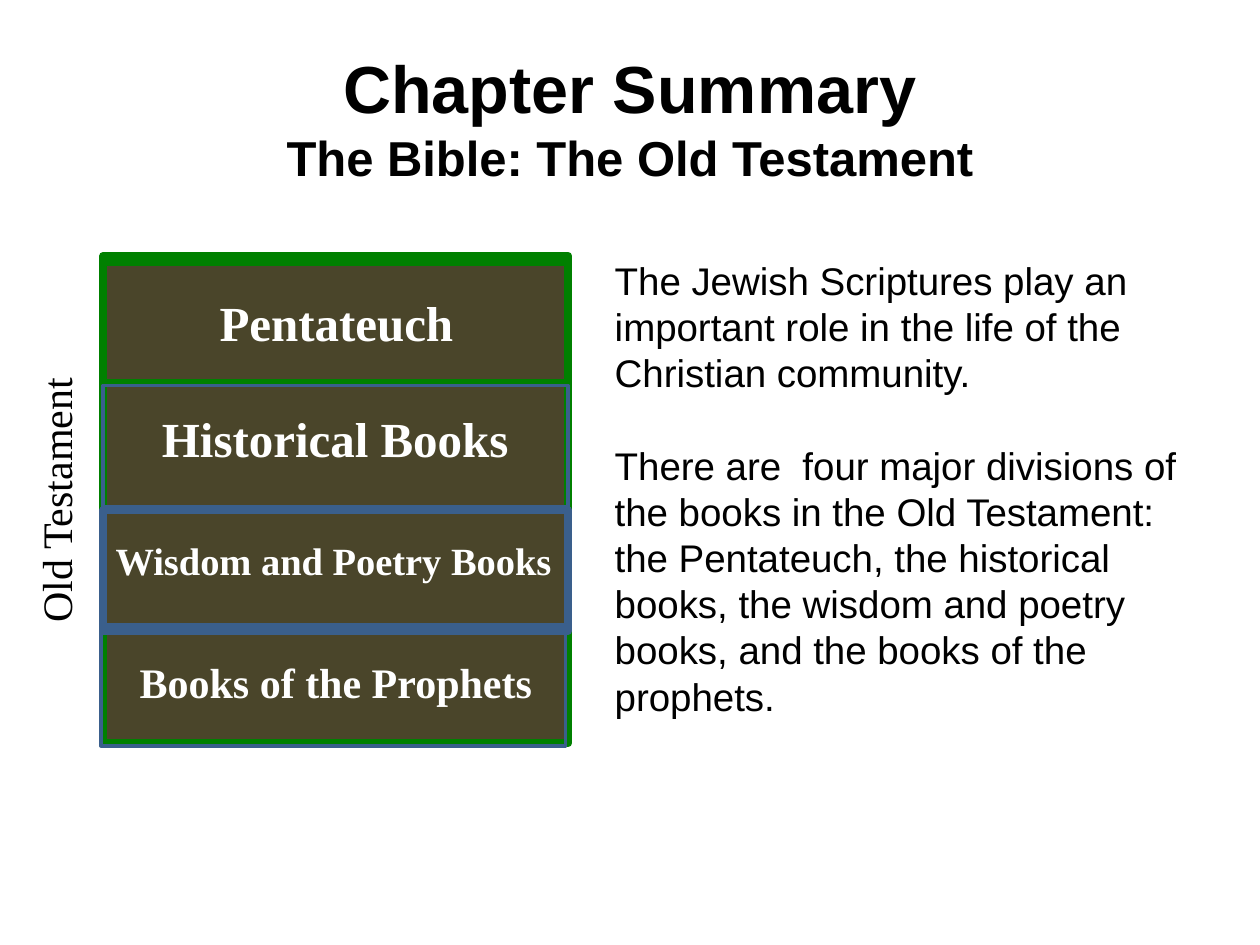
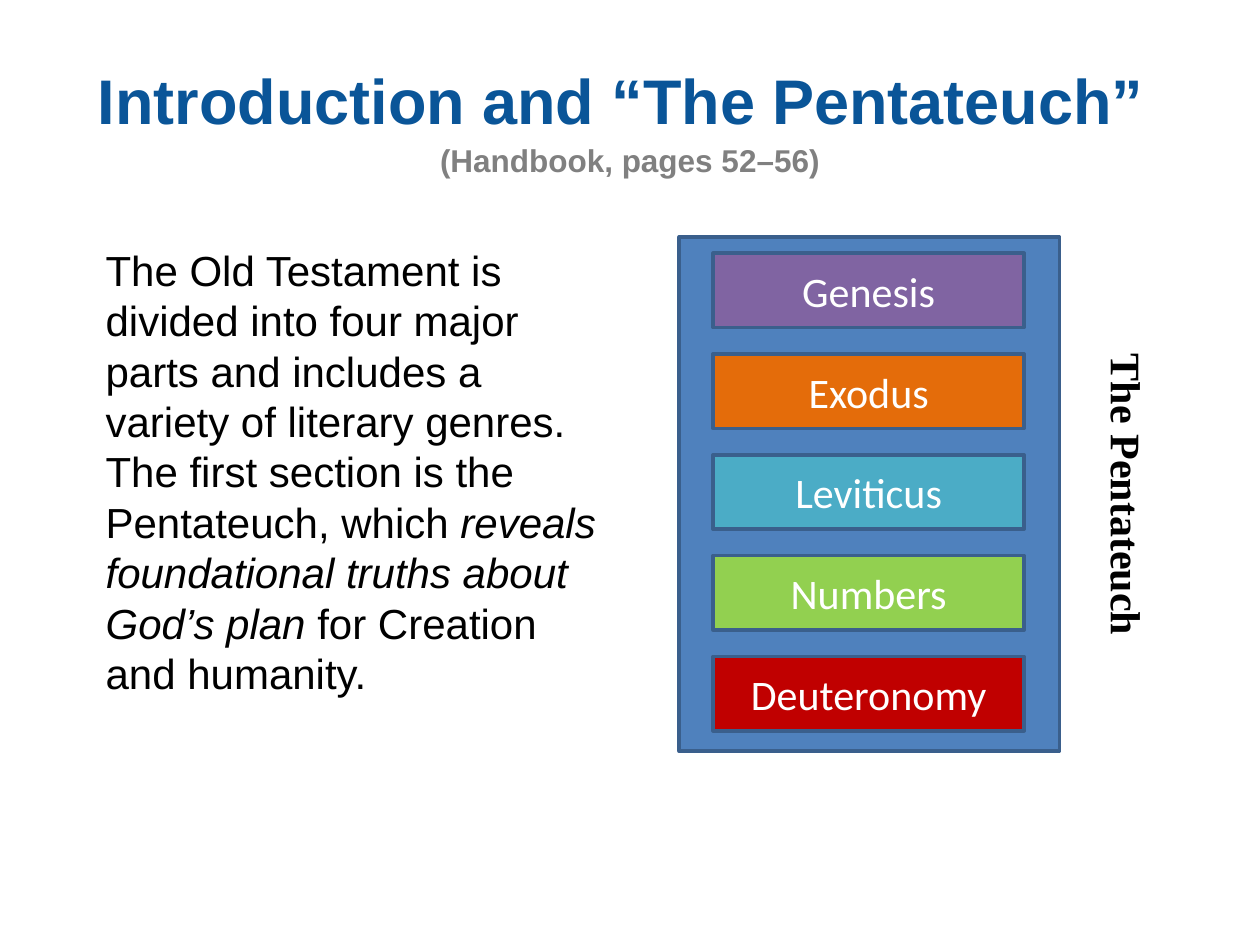
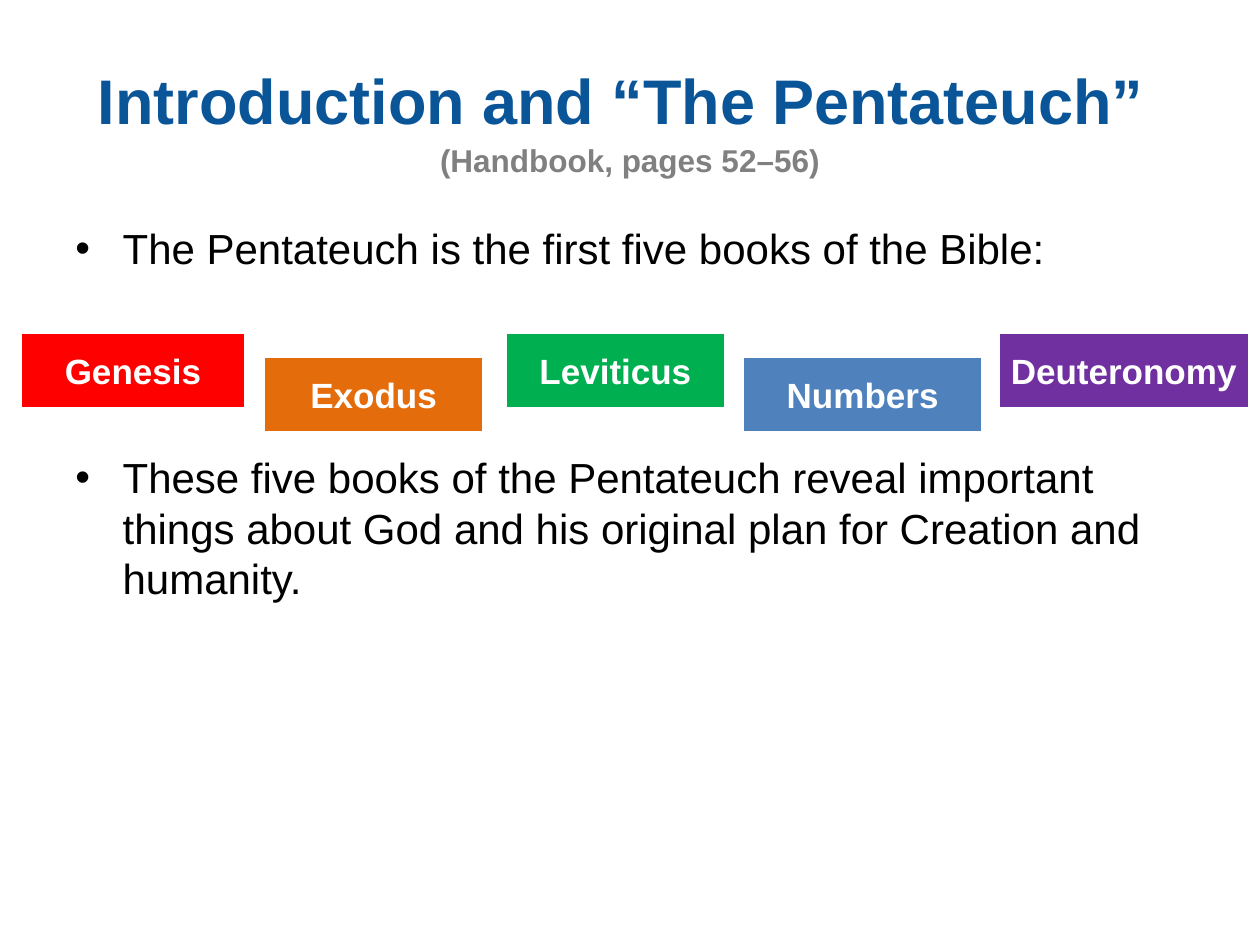
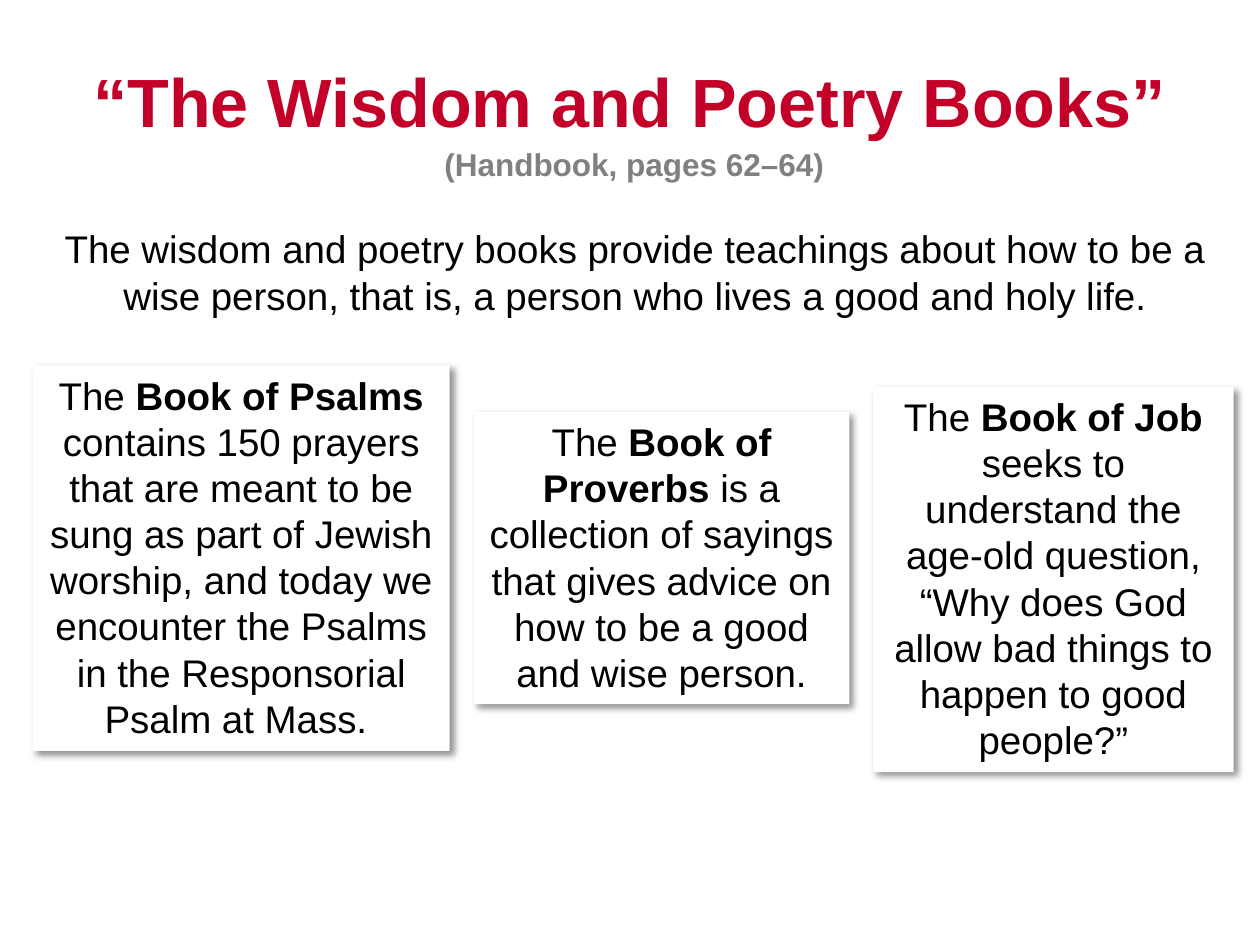
from dataclasses import dataclass

from lxml import etree
from pptx import Presentation
from pptx import util as u
from pptx.dml.color import RGBColor
from pptx.enum import shapes, text
from pptx.oxml import ns

Pt = u.Pt
LEFT, MID = text.PP_ALIGN.LEFT, text.PP_ALIGN.CENTER


@dataclass(frozen=True)
class Theme:
    """Colours, fonts and type sizes of the deck."""
    black: str = "000000"
    white: str = "FFFFFF"
    gray: str = "808080"
    navy: str = "0A5598"
    crimson: str = "C30027"
    olive: str = "4A452A"
    green: str = "008000"
    edge: str = "3A5F8C"
    blue: str = "4F81BD"
    orange: str = "E46C0A"
    violet: str = "8064A2"
    teal: str = "4BACC6"
    lime: str = "92D050"
    brick: str = "C00000"
    red: str = "FF0000"
    leaf: str = "00B050"
    purple: str = "7030A0"
    sans: str = "Arial"
    serif: str = "Times New Roman"
    label: str = "Calibri"
    head: int = 36
    sub: int = 18
    body: int = 24
    note: int = 22
    tag: int = 20
    big: int = 28


T = Theme()
BOOKS = ("Genesis", "Exodus", "Leviticus", "Numbers", "Deuteronomy")


def style(font, size=T.body, face=T.sans, color=T.black, bold=False, italic=False):
    """Set every property of a font."""
    font.size, font.name, font.bold, font.italic = Pt(size), face, bold, italic
    font.color.rgb = RGBColor.from_string(color)


def bullet(para, indent=27):
    """Give a paragraph a hanging round bullet."""
    props = para._p.get_or_add_pPr()
    props.set("marL", str(Pt(indent)))
    props.set("indent", str(-Pt(indent)))
    etree.SubElement(props, ns.qn("a:buFont")).set("typeface", T.sans)
    etree.SubElement(props, ns.qn("a:buChar")).set("char", "•")


def write(shape, *paras, align=LEFT, anchor=text.MSO_ANCHOR.TOP, gap=0,
          lead=None, dots=False, vert=None, **look):
    """Fill a shape with paragraphs, each a string or a list of (string, format) runs."""
    frame = shape.text_frame
    frame.word_wrap, frame.vertical_anchor = True, anchor
    if vert:
        frame._txBody.bodyPr.set("vert", vert)
    for i, runs in enumerate(paras):
        para = frame.add_paragraph() if i else frame.paragraphs[0]
        para.alignment = align
        if lead:
            para.line_spacing = lead
        if i and gap:
            para.space_before = Pt(gap)
        if dots:
            bullet(para)
        for words, extra in [(runs, {})] if isinstance(runs, str) else runs:
            for n, line in enumerate(words.split("\n")):
                if n:
                    para.add_line_break()
                if line:
                    run = para.add_run()
                    run.text = line
                    style(run.font, **{**look, **extra})


def label(slide, box, *paras, **look):
    """Add a text box."""
    write(slide.shapes.add_textbox(*map(Pt, box)), *paras, **look)


def block(slide, box, fill=None, line=None, width=2):
    """Add a flat rectangle."""
    rect = slide.shapes.add_shape(shapes.MSO_SHAPE.RECTANGLE, *map(Pt, box))
    rect.shadow.inherit = False
    if fill:
        rect.fill.solid()
        rect.fill.fore_color.rgb = RGBColor.from_string(fill)
    else:
        rect.fill.background()
    if line:
        rect.line.color.rgb = RGBColor.from_string(line)
        rect.line.width = Pt(width)
    else:
        rect.line.fill.background()
    return rect


def shade(shape):
    """Cast a soft shadow to the lower right."""
    group = shape._element.spPr.find(ns.qn("a:effectLst"))
    drop = etree.SubElement(group, ns.qn("a:outerShdw"), blurRad=str(Pt(4)),
                            dist=str(Pt(3)), dir="2700000", algn="tl", rotWithShape="0")
    color = etree.SubElement(drop, ns.qn("a:srgbClr"), val=T.black)
    etree.SubElement(color, ns.qn("a:alpha"), val="43000")


def title(slide, head, sub, size=T.head, color=T.navy, small=T.sub, tint=T.gray, lead=1.1):
    """Add the two-line heading."""
    label(slide, (36, 21.6, 648, 90),
          [(head + "\n", {}), (sub, {"size": small, "color": tint})],
          align=MID, anchor=text.MSO_ANCHOR.MIDDLE, lead=lead,
          size=size, color=color, bold=True)


def lesson(slide):
    """Add the heading of the Pentateuch lesson."""
    title(slide, "Introduction and “The Pentateuch” ", "(Handbook, pages 52–56)")


def book(slide, name, box, fill, line, width, **look):
    """Add a coloured rectangle with the name of a book."""
    write(block(slide, box, fill, line, width), name, align=MID,
          anchor=text.MSO_ANCHOR.MIDDLE, color=T.white, **look)


def summary(slide):
    """Chapter summary with the four divisions."""
    title(slide, "Chapter Summary", "The Bible: The Old Testament",
          size=38, color=T.black, small=T.big, tint=T.black, lead=None)
    label(slide, (344.2, 143.3, 355, 307.4),
          "The Jewish Scriptures play an important role in the life of the "
          "Christian community.",
          "There are  four major divisions of the books in the Old Testament: "
          "the Pentateuch, the historical books, the wisdom and poetry books, "
          "and the books of the prophets.",
          size=T.note, gap=26.4)
    block(slide, (59, 146.2, 265.7, 278.6), T.olive, T.green, 4.5)
    frames = ((59, 149.8, T.green, 4.5), (59, 220.3, T.edge, 2),
              (59, 291.6, T.edge, 4.5), (57.6, 357.1, T.edge, 2))
    for x, y, line, width in frames:
        block(slide, (x, y, 265.7, 69.1), line=line, width=width)
    parts = (("Pentateuch", (115.2, 163.4, 154, 41), T.big, MID),
             ("Historical Books", (74.2, 229.7, 234.7, 41), T.big, MID),
             ("Wisdom and Poetry Books", (59, 303.1, 321, 33.8), T.note, LEFT),
             ("Books of the Prophets", (47.5, 371.5, 288.7, 36), T.body, MID))
    for name, box, size, align in parts:
        label(slide, box, name, size=size, align=align, face=T.serif,
              color=T.white, bold=True)
    label(slide, (13.7, 166.3, 43.9, 239), "Old Testament", align=MID,
          vert="vert270", face=T.serif)


def stack(slide):
    """The Pentateuch as a stack of five books."""
    lesson(slide)
    label(slide, (53.3, 136.1, 299.5, 303.1),
          [("The Old Testament is divided into four major parts and includes a "
            "variety of literary genres. The first section is the Pentateuch, which ", {}),
           ("reveals foundational truths about God’s plan ", {"italic": True}),
           ("for Creation and humanity.", {})])
    block(slide, (388.1, 135.4, 217.4, 293.8), T.blue, T.edge)
    label(slide, (618.5, 169.2, 43.9, 226.8), "The Pentateuch", align=MID,
          vert="vert", face=T.serif, bold=True)
    fills = (T.violet, T.orange, T.teal, T.lime, T.brick)
    for i, (name, fill) in enumerate(zip(BOOKS, fills)):
        book(slide, name, (407.5, 144.7 + 57.6 * i, 177.8, 42.5), fill,
             T.edge, 2, face=T.label)


def row(slide):
    """The five books in a staggered row."""
    lesson(slide)
    label(slide, (36, 123.8, 664.6, 383.8),
          "The Pentateuch is the first five books of the Bible:",
          "These five books of the Pentateuch reveal important things about God "
          "and his original plan for Creation and humanity.",
          dots=True, gap=102)
    spans = ((11.5, 129), (150.5, 126), (288.7, 126), (424, 138), (570.2, 144))
    fills = (T.red, T.orange, T.leaf, T.blue, T.purple)
    for i, (name, (x, wide), fill) in enumerate(zip(BOOKS, spans, fills)):
        book(slide, name, (x, 190 + 13.7 * (i % 2), wide, 43.9), fill,
             T.white, 2.25, size=T.tag, bold=True)


def wisdom(slide):
    """Three cards on the wisdom and poetry books."""
    title(slide, "“The Wisdom and Poetry Books”", " (Handbook, pages 62–64)",
          size=39, color=T.crimson)
    label(slide, (20.9, 125.3, 684, 82),
          "The wisdom and poetry books provide teachings about how to be a wise "
          "person, that is, a person who lives a good and holy life.",
          align=MID, size=T.note)
    cards = (((18.7, 208.8, 238.3, 220.3), "Book of Psalms ",
              "contains 150 prayers that are meant to be sung as part of Jewish "
              "worship, and today we encounter the Psalms in the Responsorial "
              "Psalm at Mass. "),
             ((270.7, 235.4, 214.6, 167), "Book of Proverbs ",
              "is a collection of sayings that gives advice on how to be a good "
              "and wise person."),
             ((499, 221, 205.9, 220.3), "Book of Job ",
              "seeks to understand the age-old question, “Why does God allow bad "
              "things to happen to good people?”"))
    for box, name, words in cards:
        card = block(slide, box, T.white)
        shade(card)
        write(card, [("The ", {}), (name, {"bold": True}), (words, {})],
              align=MID, size=T.note)


def main():
    """Build the deck."""
    deck = Presentation()
    deck.slide_width, deck.slide_height = Pt(720), Pt(540)
    for draw in (summary, stack, row, wisdom):
        draw(deck.slides.add_slide(deck.slide_layouts[6]))
    deck.save("out.pptx")


if __name__ == "__main__":
    main()
